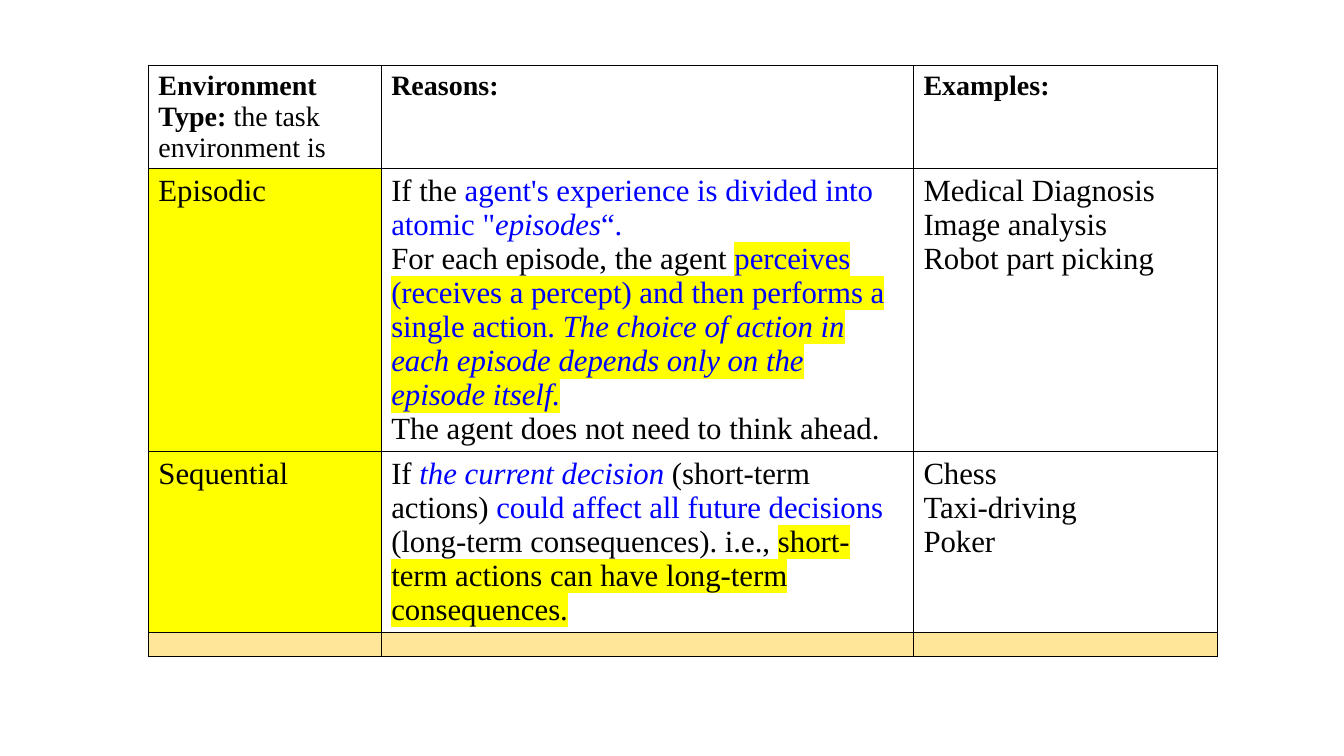
from dataclasses import dataclass

from lxml import etree
from pptx import Presentation
from pptx.dml.color import RGBColor
from pptx.oxml.ns import qn
from pptx.util import Pt


@dataclass(frozen=True)
class Theme:
    font: str = "Times New Roman"
    ink: str = "000000"
    accent: str = "0000FF"
    marker: str = "FFFF00"
    paper: str = "FFFFFF"
    footer: str = "FFE699"
    header_size: float = 20
    body_size: float = 22
    footer_size: float = 8
    border_width: float = 1


THEME = Theme()
BLANK_LAYOUT = 6
BORDER_TAGS = ("a:lnL", "a:lnR", "a:lnT", "a:lnB")
COLUMN_WIDTHS = (166.3, 380.2, 217.4)
ROW_HEIGHTS = (73.6, 202, 129, 17)

BOLD = {"bold": True}
ITALIC = {"italic": True}
BLUE = {"color": THEME.accent}
BLUE_ITALIC = BLUE | ITALIC
MARKED = {"highlight": THEME.marker}

HEADER = [
    [[("Environment Type: ", BOLD), ("the task environment is", {})]],
    [[("Reasons:", BOLD)]],
    [[("Examples:", BOLD)]],
]
EPISODIC = [
    [[("Episodic", {})]],
    [
        [
            ("If the ", {}),
            ("agent's experience is divided into atomic \"", BLUE),
            ("episodes", BLUE_ITALIC),
            ("“.", BLUE),
        ],
        [
            ("For each episode, the agent ", {}),
            ("perceives (receives a percept) and then performs a single action. ", BLUE | MARKED),
            ("The choice of action in each episode depends only on the episode itself.",
             BLUE_ITALIC | MARKED),
        ],
        [("The agent does not need to think ahead.", {})],
    ],
    [[("Medical Diagnosis", {})], [("Image analysis", {})], [("Robot part picking", {})]],
]
SEQUENTIAL = [
    [[("Sequential", {})]],
    [
        [
            ("If ", {}),
            ("the current decision ", BLUE_ITALIC),
            ("(short-term actions) ", {}),
            ("could affect all future decisions ", BLUE),
            ("(long-term consequences). i.e., ", {}),
            ("short-term actions can have long-term consequences.", MARKED),
        ]
    ],
    [[("Chess", {})], [("Taxi-driving", {})], [("Poker", {})]],
]
FOOTER = [[[]], [[]], [[]]]

PLAIN_FILLS = (THEME.paper,) * 3
TYPE_FILLS = (THEME.marker, THEME.paper, THEME.paper)
FOOTER_FILLS = (THEME.footer,) * 3
ROWS = (
    (HEADER, THEME.header_size, PLAIN_FILLS),
    (EPISODIC, THEME.body_size, TYPE_FILLS),
    (SEQUENTIAL, THEME.body_size, TYPE_FILLS),
    (FOOTER, THEME.footer_size, FOOTER_FILLS),
)


def add_color(parent, color):
    etree.SubElement(parent, qn("a:srgbClr"), val=color)


def add_phrase(paragraph, wording, size, emphasis):
    phrase = paragraph.add_run()
    phrase.text = wording
    style = {"name": THEME.font, "size": Pt(size), "bold": False, "italic": False} | emphasis
    color = style.pop("color", THEME.ink)
    highlight = style.pop("highlight", None)
    for attribute, value in style.items():
        setattr(phrase.font, attribute, value)
    phrase.font.color.rgb = RGBColor.from_string(color)
    if highlight:
        marking = etree.Element(qn("a:highlight"))
        add_color(marking, highlight)
        phrase.font._element.find(qn("a:solidFill")).addnext(marking)


def write_cell(cell, paragraphs, size):
    for index, phrases in enumerate(paragraphs):
        frame = cell.text_frame
        paragraph = frame.add_paragraph() if index else frame.paragraphs[0]
        for wording, emphasis in phrases:
            add_phrase(paragraph, wording, size, emphasis)
        if not phrases:
            etree.SubElement(paragraph._p, qn("a:endParaRPr"), sz=str(int(size * 100)))


def paint_cell(cell, fill):
    cell.fill.solid()
    cell.fill.fore_color.rgb = RGBColor.from_string(fill)
    properties = cell._tc.get_or_add_tcPr()
    for index, tag in enumerate(BORDER_TAGS):
        border = etree.Element(qn(tag), w=str(Pt(THEME.border_width)))
        add_color(etree.SubElement(border, qn("a:solidFill")), THEME.ink)
        properties.insert(index, border)


def add_environment_table(slide):
    environments = slide.shapes.add_table(
        len(ROWS), len(COLUMN_WIDTHS), Pt(106), Pt(46.8),
        Pt(sum(COLUMN_WIDTHS)), Pt(sum(ROW_HEIGHTS)),
    ).table
    for option in ("first_row", "horz_banding"):
        setattr(environments, option, False)
    for column, width in zip(environments.columns, COLUMN_WIDTHS):
        column.width = Pt(width)
    for row, height, (contents, size, fills) in zip(environments.rows, ROW_HEIGHTS, ROWS):
        row.height = Pt(height)
        for cell, paragraphs, fill in zip(row.cells, contents, fills):
            write_cell(cell, paragraphs, size)
            paint_cell(cell, fill)


def main():
    deck = Presentation()
    deck.slide_width, deck.slide_height = Pt(960), Pt(540)
    slide = deck.slides.add_slide(deck.slide_layouts[BLANK_LAYOUT])
    add_environment_table(slide)
    deck.save("out.pptx")


if __name__ == "__main__":
    main()
